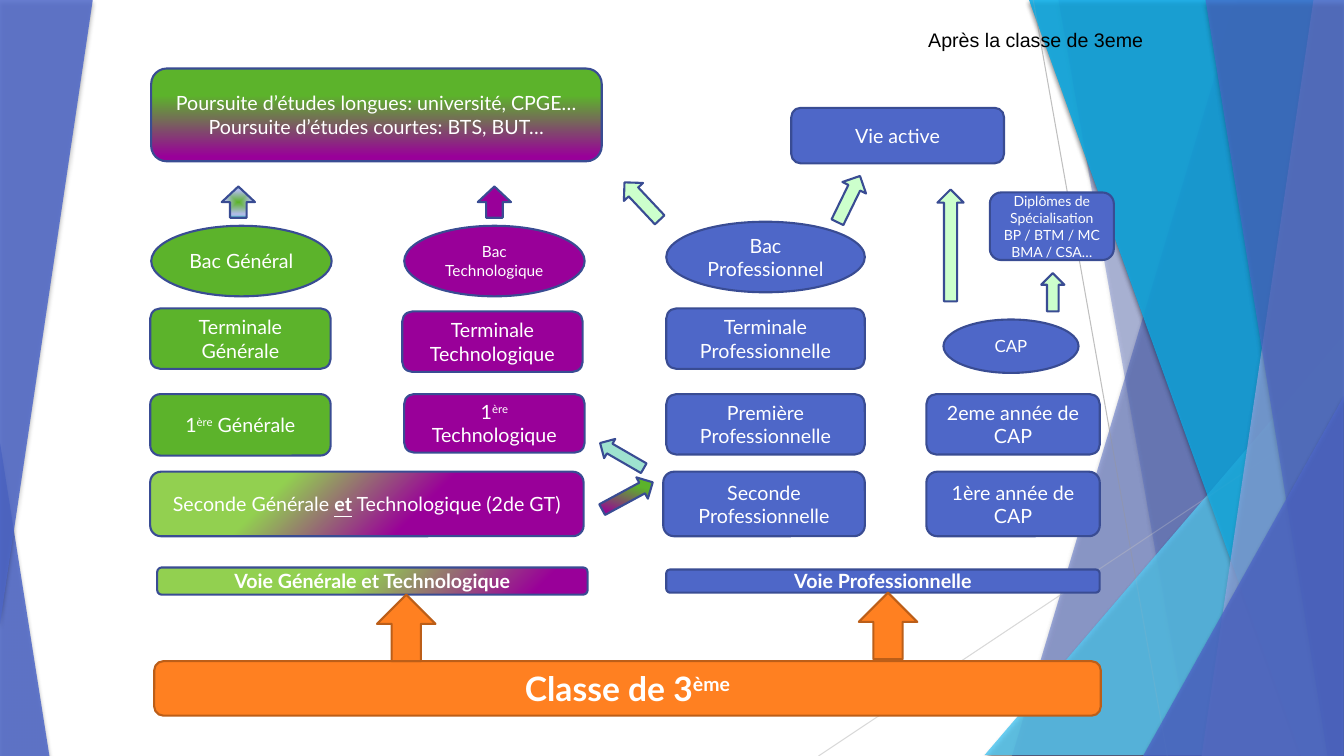
import dataclasses
import enum
import typing

import lxml.etree
import pptx
import pptx.dml.color
import pptx.enum.shapes
import pptx.enum.text
import pptx.oxml.ns
import pptx.util

Kind = pptx.enum.shapes.MSO_SHAPE
qn = pptx.oxml.ns.qn

# The grid has square cells, a tenth of an inch wide.
COLUMNS, ROWS = 133.33, 75
CELL = pptx.util.Inches(0.1)

COLORS = {
    "blue": "4E67C8", "outline": "394C93", "green": "5CB32B", "lime": "92D050",
    "purple": "990099", "orange": "FF8021", "rust": "BC5E18", "mint": "CCFFCC",
    "teal": "9EE2CF", "turquoise": "33CCCC", "lavender": "AFBBE6",
    "periwinkle": "95A4DE", "sky": "5ECCF3", "cyan": "12B2EB",
    "gray": "BFBFBF", "pale gray": "D9D9D9", "white": "FFFFFF", "black": "000000",
}


class Accent(enum.Enum):
    SUPERSCRIPT = enum.auto()
    UNDERLINE = enum.auto()


class Gradient(typing.NamedTuple):
    stops: tuple[tuple[int, str], ...]
    angle: int | None = None  # None runs outwards from the centre


class Lane(typing.NamedTuple):
    left: float
    width: float


@dataclasses.dataclass(frozen=True)
class Strip:
    """Band from a slanted left edge to the right side of the slide."""
    top_left: float
    bottom_left: float
    color: str
    opacity: int


@dataclasses.dataclass(frozen=True)
class Wedge:
    left: float
    top: float
    width: float
    height: float
    opacity: int
    color: str = "blue"
    apex: int = 1
    rotation: float = 0


@dataclasses.dataclass(frozen=True)
class Box:
    """Labelled stage; the parts of text between bars carry the accent."""
    text: str
    lane: Lane
    top: float
    height: float
    fill: str | Gradient = "blue"
    size: int = 14
    bold: bool = False
    accent: Accent = Accent.SUPERSCRIPT
    kind: Kind = Kind.ROUNDED_RECTANGLE
    outline: str = "outline"


@dataclasses.dataclass(frozen=True)
class Arrow:
    left: float
    top: float
    width: float
    height: float
    fill: str | Gradient = "mint"
    rotation: float = 0
    kind: Kind = Kind.UP_ARROW
    outline: str = "outline"


GENERAL, TECHNO = Lane(14.9, 17.9), Lane(40.1, 17.9)
PRO, CAP = Lane(66.1, 19.7), Lane(91.9, 17.2)
FIRST_YEAR, SECOND_YEAR, FINAL_YEAR, DIPLOMA = 46.8, 39.1, 30.6, 22.4

STRIPS_AND_WEDGES = (
    Strip(122.8, 100.4, "blue", 30),
    Strip(105, 118.2, "blue", 20),
    Wedge(97.7, 33.3, 35.6, 41.6, 72, "sky"),
    Strip(102.1, 129.1, "cyan", 70),
    Strip(130.3, 119.2, "periwinkle", 70),
    Strip(119.6, 131.7, "blue", 65),
    Wedge(113.4, 39.3, 19.9, 35.7, 80),
)
LOWER_LEFT_WEDGE = Wedge(0, 43.9, 4.9, 31.1, 85, apex=0)
UPPER_LEFT_WEDGE = Wedge(0, 0, 9.2, 61.9, 85, rotation=180)
HAIRLINES = (((102.5, 0), (115.8, ROWS), "gray"),
             ((COLUMNS, 40.3), (81.2, ROWS), "pale gray"))

BOXES = (
    Box("Classe de 3|ème", Lane(15.3, 93.9), 65.6, 5.4, "orange", 24, True, outline="rust"),
    Box("Voie Générale et Technologique", Lane(15.6, 42.7), 56.3, 2.7,
        Gradient(((46, "lime"), (88, "purple")), 45), bold=True),
    Box("Voie Professionnelle", Lane(66.1, 43), 56.5, 2.3, bold=True),
    Box("Seconde Générale |et| Technologique (2de GT)", Lane(14.9, 43), FIRST_YEAR, 6.4,
        Gradient(((29, "lime"), (62, "purple")), 45), accent=Accent.UNDERLINE),
    Box("Seconde Professionnelle", Lane(65.8, 20), FIRST_YEAR, 6.4),
    Box("1ère année de CAP", CAP, FIRST_YEAR, 6.4),
    Box("1|ère| Générale", GENERAL, SECOND_YEAR, 6.1, "green"),
    Box("1|ère| Technologique", TECHNO, SECOND_YEAR, 5.8, "purple"),
    Box("Première Professionnelle", PRO, SECOND_YEAR, 6),
    Box("2eme année de CAP", CAP, SECOND_YEAR, 6),
    Box("Terminale Générale", GENERAL, FINAL_YEAR, 6, "green"),
    Box("Terminale Technologique", Lane(39.9, 17.9), 30.9, 6, "purple"),
    Box("Terminale Professionnelle", PRO, FINAL_YEAR, 6),
    Box("Bac Général", Lane(15, 17.9), DIPLOMA, 7, "green", kind=Kind.OVAL),
    Box("Bac Technologique", TECHNO, DIPLOMA, 7, "purple", 11, kind=Kind.OVAL),
    Box("Bac Professionnel", PRO, 22, 7, kind=Kind.OVAL),
    Box("CAP", Lane(93.6, 13.4), 31.7, 5.3, size=12, kind=Kind.OVAL),
    Box("Poursuite d’études longues: université, CPGE…\n"
        "Poursuite d’études courtes: BTS, BUT…", Lane(15, 44.7), 6.8, 9.2,
        Gradient(((5, "purple"), (71, "green")), 270)),
    Box("Vie active", Lane(78.5, 21.1), 10.7, 5.5),
    Box("Diplômes de\nSpécialisation\nBP / BTM / MC\nBMA / CSA…",
        Lane(98.2, 12.3), 19.1, 6.7, size=10),
)
ARROWS = (
    Arrow(37.4, 59, 5.8, 6.6, "orange", outline="rust"),
    Arrow(85.2, 58.8, 5.8, 6.6, "orange", outline="rust"),
    Arrow(62.4, 17.4, 2.6, 5.1, rotation=316.8),
    Arrow(82.9, 17.2, 2.6, 5.1, rotation=26),
    Arrow(93, 18.8, 2.6, 11.1),
    Arrow(22, 18.5, 3.3, 3.1, Gradient(
        ((0, "green"), (74, "lavender"), (83, "lavender"), (100, "turquoise")))),
    Arrow(47.4, 18.5, 3.3, 3.1, "purple"),
    Arrow(103.3, 27.1, 2.3, 3.8),
    Arrow(60.6, 42.7, 2.2, 5, "teal", 300),
    Arrow(59.4, 48, 5.7, 2.4, Gradient(((31, "green"), (87, "purple")), 135),
          331.6, Kind.RIGHT_ARROW),
)


def cells(*lengths: float) -> list[int]:
    return [round(length * CELL) for length in lengths]


def rgb(name: str) -> pptx.dml.color.RGBColor:
    return pptx.dml.color.RGBColor.from_string(COLORS[name])


def add_xml(parent, tag: str, **attributes):
    child = lxml.etree.SubElement(parent, qn(tag))
    for name, value in attributes.items():
        child.set(name, str(value))
    return child


def paint(shape, fill: str | Gradient, outline: str) -> None:
    shape.shadow.inherit = False
    shape.line.color.rgb = rgb(outline)
    shape.line.width = pptx.util.Pt(1.5)
    if isinstance(fill, str):
        shape.fill.solid()
        shape.fill.fore_color.rgb = rgb(fill)
        return
    shape.fill.gradient()
    gradient = shape._element.spPr.find(qn("a:gradFill"))
    gradient.clear()
    gradient.set("rotWithShape", "1")
    stops = add_xml(gradient, "a:gsLst")
    for position, color in fill.stops:
        stop = add_xml(stops, "a:gs", pos=position * 1000)
        add_xml(stop, "a:srgbClr", val=COLORS[color])
    if fill.angle is None:
        center = add_xml(gradient, "a:path", path="rect")
        add_xml(center, "a:fillToRect", l=50000, t=50000, r=50000, b=50000)
    else:
        add_xml(gradient, "a:lin", ang=fill.angle * 60000, scaled=0)


def draw_facet(slide, facet: Strip | Wedge) -> None:
    """Draw one translucent, shadowed piece of the backdrop."""
    if isinstance(facet, Strip):
        builder = slide.shapes.build_freeform(*cells(facet.top_left, 0))
        corners = ((COLUMNS, 0), (COLUMNS, ROWS), (facet.bottom_left, ROWS))
        builder.add_line_segments([cells(*corner) for corner in corners])
        shape = builder.convert_to_shape()
    else:
        frame = cells(facet.left, facet.top, facet.width, facet.height)
        shape = slide.shapes.add_shape(Kind.ISOSCELES_TRIANGLE, *frame)
        shape.adjustments[0] = facet.apex
        shape.rotation = facet.rotation
    paint(shape, facet.color, facet.color)
    shape.line.fill.background()
    properties = shape._element.spPr
    color = properties.find(qn("a:solidFill")).find(qn("a:srgbClr"))
    add_xml(color, "a:alpha", val=facet.opacity * 1000)
    shadow = add_xml(properties.find(qn("a:effectLst")), "a:outerShdw",
                     blurRad=pptx.util.Pt(3), dist=pptx.util.Pt(2), dir=5400000, rotWithShape=0)
    add_xml(add_xml(shadow, "a:srgbClr", val=COLORS["black"]), "a:alpha", val=35000)


def draw_backdrop(slide) -> None:
    for facet in (*STRIPS_AND_WEDGES, LOWER_LEFT_WEDGE):
        draw_facet(slide, facet)
    for start, end, color in HAIRLINES:
        line = slide.shapes.add_connector(
            pptx.enum.shapes.MSO_CONNECTOR.STRAIGHT, *cells(*start, *end))
        line.line.color.rgb = rgb(color)
        line.line.width = pptx.util.Pt(0.75)
        add_xml(line._element.spPr, "a:effectLst")
    for facet in (*STRIPS_AND_WEDGES, UPPER_LEFT_WEDGE):
        draw_facet(slide, facet)


def format_run(run, size: int, color: str, font: str, bold: bool = False) -> None:
    run.font.size = pptx.util.Pt(size)
    run.font.name = font
    run.font.bold = bold
    run.font.color.rgb = rgb(color)


def draw_box(slide, box: Box) -> None:
    frame = cells(box.lane.left, box.top, box.lane.width, box.height)
    shape = slide.shapes.add_shape(box.kind, *frame)
    paint(shape, box.fill, box.outline)
    shape.text_frame.word_wrap = True
    shape.text_frame.vertical_anchor = pptx.enum.text.MSO_ANCHOR.MIDDLE
    shape.text_frame.text = box.text
    for paragraph in shape.text_frame.paragraphs:
        paragraph.alignment = pptx.enum.text.PP_ALIGN.CENTER
        first, *others = paragraph.text.split("|")
        paragraph.text = first
        for part in others:
            paragraph.add_run().text = part
        for run in paragraph.runs:
            format_run(run, box.size, "white", "Lato", box.bold)
        for run in paragraph.runs[1::2]:
            if box.accent is Accent.SUPERSCRIPT:
                run.font._element.set("baseline", "30000")
            else:
                run.font.bold = run.font.underline = True


def draw_arrow(slide, arrow: Arrow) -> None:
    frame = cells(arrow.left, arrow.top, arrow.width, arrow.height)
    shape = slide.shapes.add_shape(arrow.kind, *frame)
    shape.rotation = arrow.rotation
    paint(shape, arrow.fill, arrow.outline)


def draw_heading(slide) -> None:
    heading = slide.shapes.add_textbox(*cells(91.1, 2.3, 25.2, 3.3))
    heading.text_frame.word_wrap = True
    heading.text_frame.text = "Après la classe de 3eme"
    format_run(heading.text_frame.paragraphs[0].runs[0], 14, "black", "Arial")


def main() -> None:
    presentation = pptx.Presentation()
    presentation.slide_width, presentation.slide_height = cells(COLUMNS, ROWS)
    slide = presentation.slides.add_slide(presentation.slide_layouts[6])
    draw_backdrop(slide)
    draw_heading(slide)
    for box in BOXES:
        draw_box(slide, box)
    for arrow in ARROWS:
        draw_arrow(slide, arrow)
    presentation.save("out.pptx")


if __name__ == "__main__":
    main()
